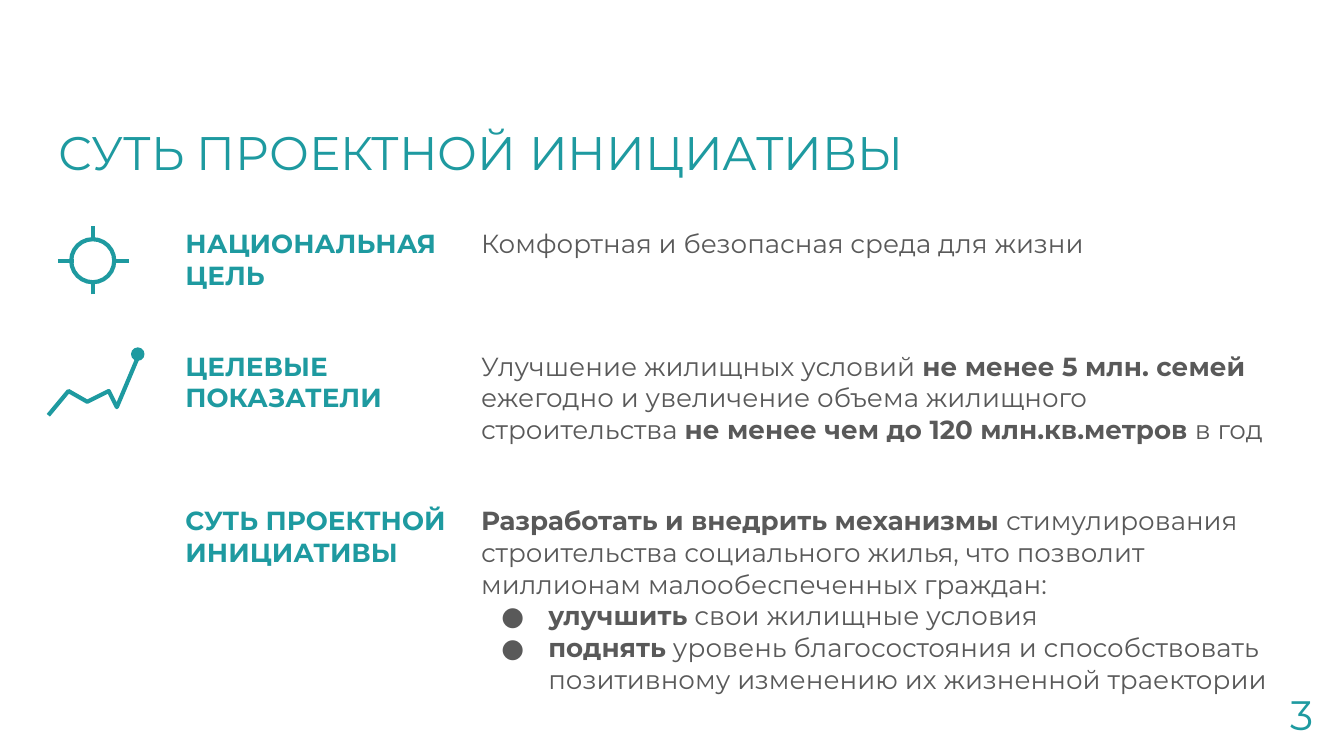
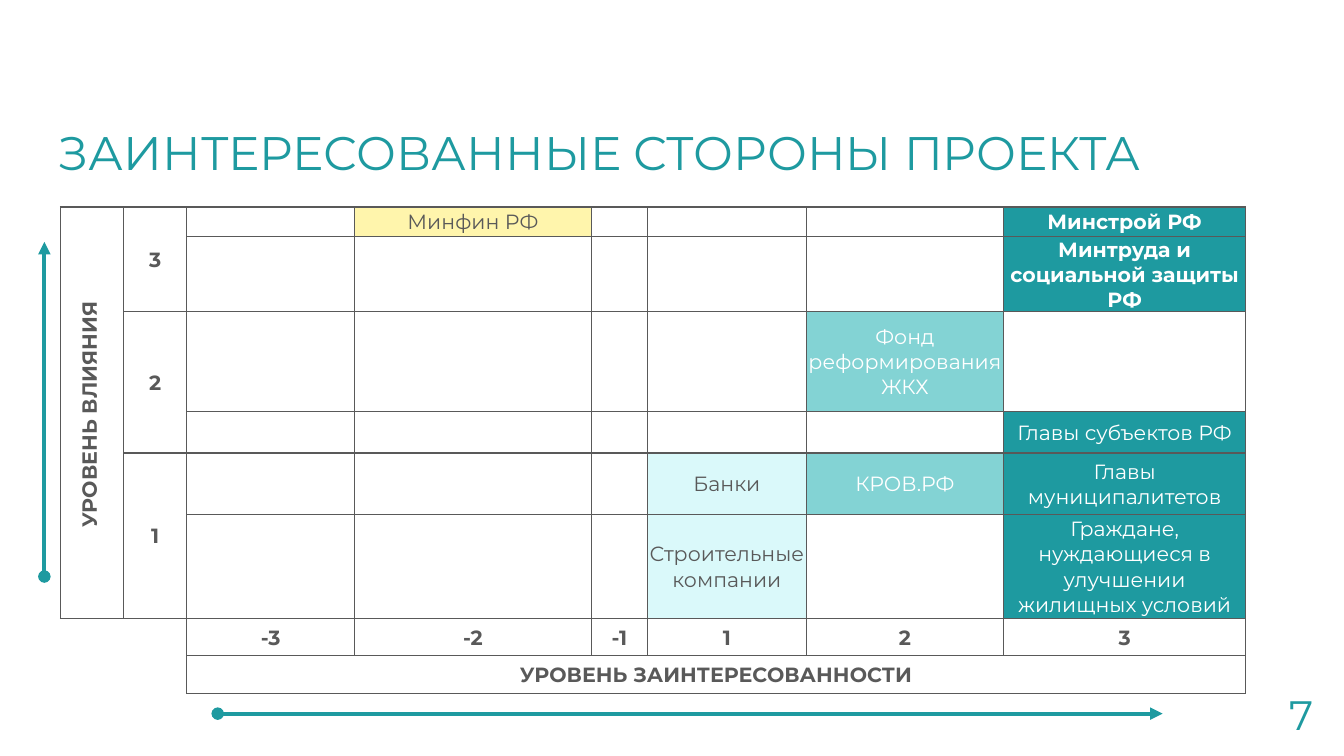
from lxml.etree import SubElement
from pptx import Presentation
from pptx.dml.color import RGBColor
from pptx.enum.shapes import MSO_CONNECTOR, MSO_SHAPE
from pptx.enum.text import MSO_ANCHOR as ANCHOR, PP_ALIGN as ALIGN
from pptx.oxml import parse_xml
from pptx.oxml.ns import nsdecls, qn
from pptx.util import Pt

PX = 9144
FONT = "Montserrat"
PLAIN_TABLE = "{2D5ABB26-0587-4C30-8999-92F81FD0307C}"
TEAL, AQUA, PALE, YELLOW = "1E9AA0", "83D3D4", "DAF9FA", "FFE837"
GREY, WHITE = "595959", "FFFFFF"
rgb = RGBColor.from_string


def write(paragraph, runs, size, colour, align=ALIGN.LEFT):
    paragraph.alignment = align
    for text, bold in runs:
        run = paragraph.add_run()
        run.text = text
        run.font.name = FONT
        run.font.size = Pt(size)
        run.font.bold = bold
        run.font.color.rgb = rgb(colour)


def draw_line(shapes, *ends, arrow=False):
    line = shapes.add_connector(MSO_CONNECTOR.STRAIGHT, *[v * PX for v in ends])
    line.line.color.rgb = rgb(TEAL)
    line.line.width = Pt(2.25)
    properties = line._element.spPr
    if arrow:
        stroke = properties.find(qn("a:ln"))
        SubElement(stroke, qn("a:headEnd"), type="oval")
        SubElement(stroke, qn("a:tailEnd"), type="triangle")
    SubElement(properties, qn("a:effectLst"))


deck = Presentation()
deck.slide_width = 1000 * PX
deck.slide_height = deck.slide_width * 9 // 16
essence, parties = [deck.slides.add_slide(deck.slide_layouts[6]) for _ in range(2)]

captions = []
for slide, heading, number in [
    (essence, "СУТЬ ПРОЕКТНОЙ ИНИЦИАТИВЫ", "3"),
    (parties, "ЗАИНТЕРЕСОВАННЫЕ СТОРОНЫ ПРОЕКТА", "7"),
]:
    captions += [
        (slide, (34, 82, 932, 63), heading, 25.2, TEAL, False, ALIGN.LEFT, ANCHOR.TOP, 0),
        (slide, (927, 510, 60, 43), number, 22, TEAL, False, ALIGN.RIGHT, ANCHOR.MIDDLE, 0),
    ]
captions.append(
    (parties, (-61, 287, 254, 43), "УРОВЕНЬ ВЛИЯНИЯ", 11, GREY, True, ALIGN.CENTER, ANCHOR.MIDDLE, 270)
)
for slide, box, text, size, colour, bold, align, anchor, rotation in captions:
    caption = slide.shapes.add_textbox(*[v * PX for v in box])
    caption.rotation = rotation
    frame = caption.text_frame
    frame.word_wrap = True
    frame.vertical_anchor = anchor
    frame.margin_left = frame.margin_right = frame.margin_top = frame.margin_bottom = 10 * PX
    write(frame.paragraphs[0], [(text, bold)], size, colour, align)

topics = [
    (91, ["НАЦИОНАЛЬНАЯ", "ЦЕЛЬ"], [[("Комфортная и безопасная среда для жизни", False)]]),
    (115, ["ЦЕЛЕВЫЕ", "ПОКАЗАТЕЛИ"], [[
        ("Улучшение жилищных условий ", False),
        ("не менее 5 млн. семей", True),
        (" ежегодно и увеличение объема жилищного строительства ", False),
        ("не менее чем до 120 млн.кв.метров", True),
        (" в год", False),
    ]]),
    (157, ["СУТЬ ПРОЕКТНОЙ ИНИЦИАТИВЫ"], [
        [("Разработать и внедрить механизмы", True),
         (" стимулирования строительства социального жилья, что позволит "
          "миллионам малообеспеченных граждан:", False)],
        [("улучшить", True), (" свои жилищные условия", False)],
        [("поднять", True),
         (" уровень благосостояния и способствовать позитивному изменению "
          "их жизненной траектории", False)],
    ]),
]
summary = essence.shapes.add_table(3, 2, 128 * PX, 160 * PX, 838 * PX, 363 * PX).table
matrix = parties.shapes.add_table(8, 8, 45 * PX, 154 * PX, 882 * PX, 362 * PX).table
for table in (summary, matrix):
    table.first_row = table.horz_banding = False
    table._tbl.tblPr.find(qn("a:tableStyleId")).text = PLAIN_TABLE

summary.columns[0].width, summary.columns[1].width = 220 * PX, 618 * PX
for row, (height, topic, details) in enumerate(topics):
    summary.rows[row].height = height * PX
    label = [[(text, True)] for text in topic]
    for column, (paragraphs, colour) in enumerate([(label, TEAL), (details, GREY)]):
        cell = summary.cell(row, column)
        cell.fill.background()
        cell.margin_left = cell.margin_right = cell.margin_top = cell.margin_bottom = 10 * PX
        for index, runs in enumerate(paragraphs):
            paragraph = cell.text_frame.paragraphs[0] if index == 0 else cell.text_frame.add_paragraph()
            if column == 1 and index > 0:
                layout = paragraph._p.get_or_add_pPr()
                layout.set("marL", str(50 * PX))
                layout.set("indent", str(-35 * PX))
                bullet_colour = SubElement(layout, qn("a:buClr"))
                SubElement(bullet_colour, qn("a:srgbClr"), val=GREY)
                SubElement(layout, qn("a:buSzPts"), val="1400")
                SubElement(layout, qn("a:buFont"), typeface=FONT)
                SubElement(layout, qn("a:buChar"), char="●")
            write(paragraph, runs, 14, colour)

target = essence.shapes.add_group_shape().shapes
trend = essence.shapes.add_group_shape().shapes
ring = target.add_shape(MSO_SHAPE.OVAL, 53 * PX, 178 * PX, 32 * PX, 32 * PX)
for ends in [(85, 194, 96, 194), (69, 178, 69, 168), (43, 194, 55, 194), (69, 219, 69, 210)]:
    draw_line(target, *ends)
curve_builder = trend.build_freeform(36, 309, scale=PX)
curve_builder.add_line_segments([(51, 291), (65, 299), (81, 291), (87, 303), (103, 265)], close=False)
curve = curve_builder.convert_to_shape()
dot = trend.add_shape(MSO_SHAPE.OVAL, 98 * PX, 259 * PX, 9 * PX, 9 * PX)
for mark, width in [(ring, 2.25), (curve, 2.25), (dot, 0.75)]:
    mark.shadow.inherit = False
    mark.fill.background()
    mark.line.color.rgb = rgb(TEAL)
    mark.line.width = Pt(width)
dot.fill.solid()
dot.fill.fore_color.rgb = rgb(TEAL)

widths = [47, 47, 125, 176, 42, 118, 147, 180]
heights = [22, 56, 74, 31, 46, 77, 28, 28]
entries = {
    (0, 1): ("3", GREY, True, None),
    (2, 1): ("2", GREY, True, None),
    (4, 1): ("1", GREY, True, None),
    (0, 3): ("Минфин РФ", GREY, False, YELLOW),
    (0, 7): ("Минстрой РФ", WHITE, True, TEAL),
    (1, 7): ("Минтруда и социальной защиты РФ", WHITE, True, TEAL),
    (2, 6): ("Фонд реформирования ЖКХ", WHITE, False, AQUA),
    (3, 7): ("Главы субъектов РФ", WHITE, False, TEAL),
    (4, 5): ("Банки", GREY, False, PALE),
    (4, 6): ("КРОВ.РФ", WHITE, False, AQUA),
    (4, 7): ("Главы муниципалитетов", WHITE, False, TEAL),
    (5, 5): ("Строительные компании", GREY, False, PALE),
    (5, 7): ("Граждане, нуждающиеся в улучшении жилищных условий", WHITE, False, TEAL),
    (7, 2): ("УРОВЕНЬ ЗАИНТЕРЕСОВАННОСТИ", GREY, True, None),
}
for column, score in enumerate(["-3", "-2", "-1", "1", "2", "3"], 2):
    entries[6, column] = (score, GREY, True, None)

for index in range(8):
    matrix.columns[index].width = widths[index] * PX
    matrix.rows[index].height = heights[index] * PX
for row in range(8):
    for column in range(8):
        cell = matrix.cell(row, column)
        text, colour, bold, fill = entries.get((row, column), ("", GREY, False, None))
        cell.margin_left = cell.margin_right = cell.margin_top = PX
        cell.margin_bottom = 0
        cell.vertical_anchor = ANCHOR.MIDDLE
        paragraph = cell.text_frame.paragraphs[0]
        if text:
            write(paragraph, [(text, bold)], 11, colour, ALIGN.CENTER)
        else:
            SubElement(paragraph._p, qn("a:endParaRPr"), sz="1100")
        cell.fill.background()
        if fill:
            cell.fill.solid()
            cell.fill.fore_color.rgb = rgb(fill)
        properties = cell._tc.tcPr
        if fill == YELLOW:
            tint = properties.find(qn("a:solidFill")).find(qn("a:srgbClr"))
            SubElement(tint, qn("a:alpha"), val="41000")
        in_corner = row > 5 and column < 2
        for position, side in enumerate("LRTB"):
            if in_corner and side in "LB":
                stroke = "<a:noFill/>"
            else:
                stroke = f'<a:solidFill><a:srgbClr val="{GREY}"/></a:solidFill>'
            border = f'<a:ln{side} {nsdecls("a")} w="{Pt(0.75)}">{stroke}</a:ln{side}>'
            properties.insert(position, parse_xml(border))
for top, left, bottom, right in [
    (0, 0, 5, 0), (0, 1, 1, 1), (2, 1, 3, 1), (4, 1, 5, 1), (6, 0, 7, 1), (7, 2, 7, 7),
]:
    matrix.cell(top, left).merge(matrix.cell(bottom, right))

draw_line(parties.shapes, 33, 429, 33, 180, arrow=True)
draw_line(parties.shapes, 162, 531, 865, 531, arrow=True)

deck.save("out.pptx")
